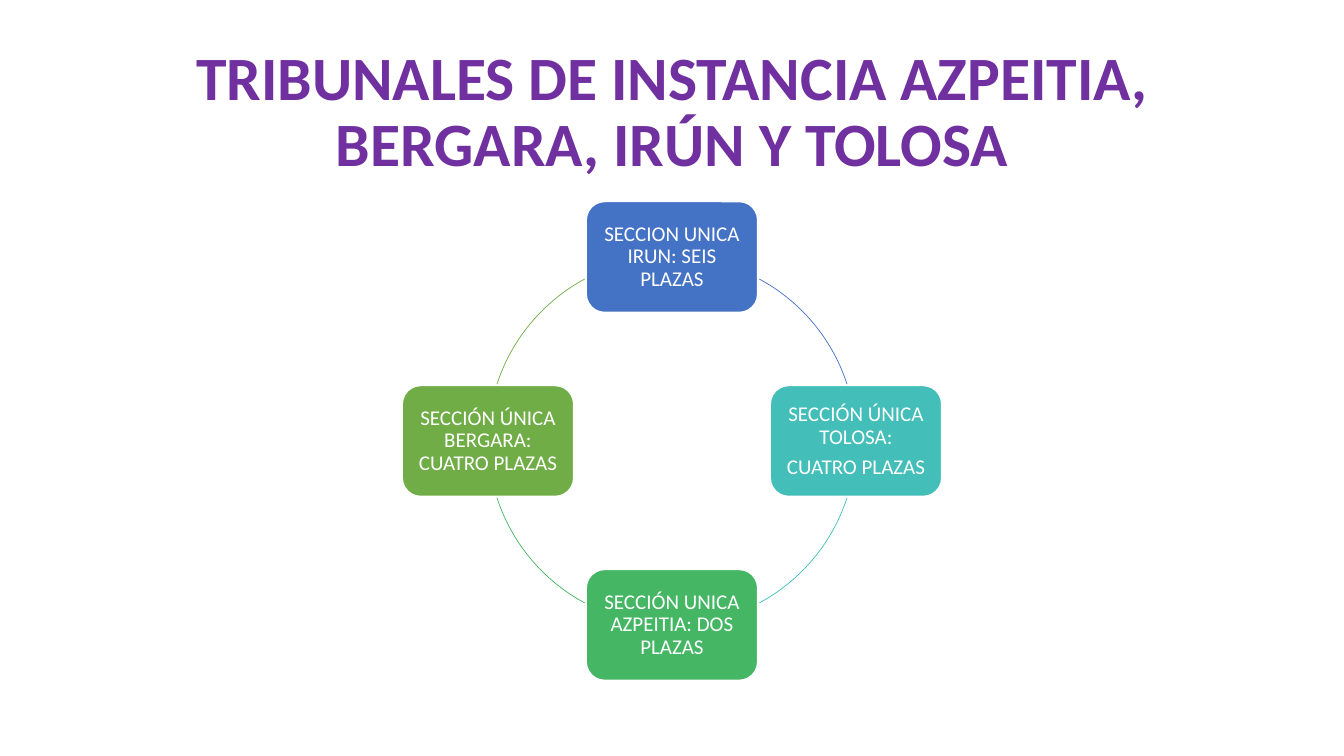
from math import cos, radians, sin

from pptx import Presentation
from pptx.dml.color import RGBColor
from pptx.enum.shapes import MSO_SHAPE
from pptx.enum.text import MSO_ANCHOR, MSO_AUTO_SIZE, PP_ALIGN
from pptx.util import Inches, Pt

ROUNDED, ARC = MSO_SHAPE.ROUNDED_RECTANGLE, MSO_SHAPE.ARC
MIDDLE, CENTER, NO_FIT = MSO_ANCHOR.MIDDLE, PP_ALIGN.CENTER, MSO_AUTO_SIZE.NONE

WHITE = RGBColor(0xFF, 0xFF, 0xFF)
PURPLE = RGBColor(0x70, 0x30, 0xA0)
BLUE = RGBColor(0x44, 0x72, 0xC4)
TEAL = RGBColor(0x43, 0xBE, 0xB9)
EMERALD = RGBColor(0x45, 0xB6, 0x64)
GREEN = RGBColor(0x70, 0xAD, 0x47)

TITLE = "TRIBUNALES DE INSTANCIA AZPEITIA, BERGARA, IRÚN Y TOLOSA"
SECTIONS = [
    (BLUE, ["SECCION UNICA IRUN: SEIS PLAZAS"]),
    (TEAL, ["SECCIÓN ÚNICA TOLOSA:", "CUATRO PLAZAS"]),
    (EMERALD, ["SECCIÓN UNICA AZPEITIA: DOS PLAZAS"]),
    (GREEN, ["SECCIÓN ÚNICA BERGARA: CUATRO PLAZAS"]),
]
TITLE_BOX = (0.92, 0.4, 11.5, 1.45)
RING_BOX = (4.84, 2.55, 3.65, 3.65)
CARD_WIDTH, CARD_HEIGHT = 1.7, 1.1
ARC_STARTS = (298.3, 18, 118.3, 198)
ARC_SWEEP = 43.7
DEGREE_UNIT = 0.6


def write_text(shape, lines, margin, gap, font_format):
    """Fill a shape with centred paragraphs in one format."""
    frame = shape.text_frame
    frame_format = {
        "text": "\n".join(lines), "word_wrap": True, "auto_size": NO_FIT,
        "vertical_anchor": MIDDLE, "margin_left": margin, "margin_right": margin,
    }
    for name, value in frame_format.items():
        setattr(frame, name, value)
    for para in frame.paragraphs:
        para.alignment, para.line_spacing, para.space_after = CENTER, 0.9, gap
        for span in para.runs:
            span.font.color.rgb = font_format["color"]
            for name in ("name", "size", "bold"):
                setattr(span.font, name, font_format[name])


def add_title(page, box):
    """Place the heading in the title placeholder."""
    title = page.shapes.title
    for name, value in zip(("left", "top", "width", "height"), box):
        setattr(title, name, Inches(value))
    write_text(title, [TITLE], Inches(0.1), Pt(0),
               {"name": "Calibri", "size": Pt(44), "bold": True, "color": PURPLE})


def add_card(page, center_x, center_y, color, lines):
    """Draw a rounded section card around a centre point."""
    card = page.shapes.add_shape(
        ROUNDED, Inches(center_x - CARD_WIDTH / 2), Inches(center_y - CARD_HEIGHT / 2),
        Inches(CARD_WIDTH), Inches(CARD_HEIGHT))
    card.shadow.inherit = False
    card.fill.solid()
    card.fill.fore_color.rgb = color
    card.line.color.rgb = WHITE
    card.line.width = Pt(1)
    write_text(card, lines, Inches(0.06), Pt(5.25),
               {"name": "Calibri", "size": Pt(15), "bold": False, "color": WHITE})


def add_arc(page, box, start, color):
    """Draw the stretch of the ring that follows a card."""
    arc = page.shapes.add_shape(ARC, *map(Inches, box))
    arc.shadow.inherit = False
    arc.fill.background()
    arc.line.color.rgb = color
    arc.line.width = Pt(0.5)
    arc.adjustments[0] = start * DEGREE_UNIT
    arc.adjustments[1] = (start + ARC_SWEEP) * DEGREE_UNIT


def add_cycle(page, box):
    """Spread the sections clockwise from the top of a ring."""
    left, top, width, height = box
    for index, (color, lines) in enumerate(SECTIONS):
        angle = radians(index * 360 / len(SECTIONS) - 90)
        center_x = left + width / 2 * (1 + cos(angle))
        center_y = top + height / 2 * (1 + sin(angle))
        add_card(page, center_x, center_y, color, lines)
        add_arc(page, box, ARC_STARTS[index], color)


def main():
    """Build and save the deck."""
    deck = Presentation()
    deck.slide_width, deck.slide_height = Inches(13.33), Inches(7.5)
    page = deck.slides.add_slide(deck.slide_layouts[5])
    add_title(page, TITLE_BOX)
    add_cycle(page, RING_BOX)
    deck.save("out.pptx")


if __name__ == "__main__":
    main()
